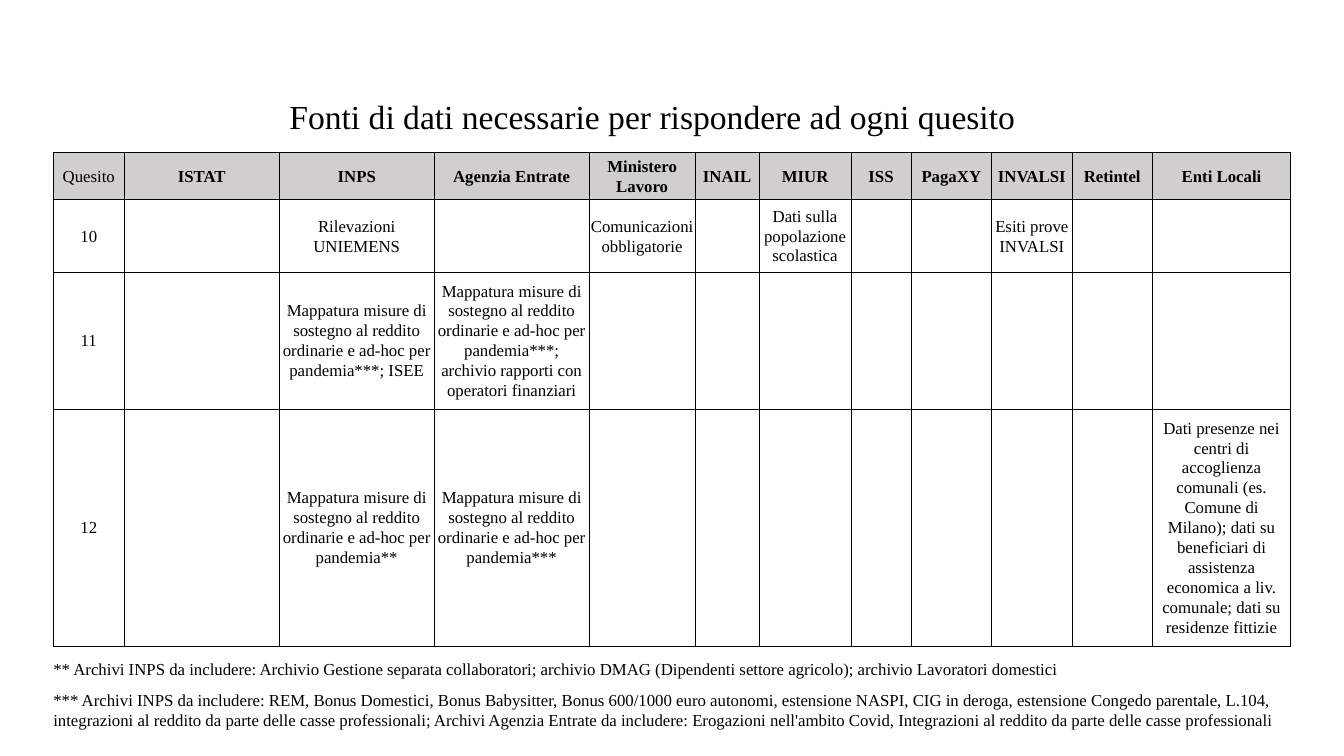
"""Build a slide listing the data sources needed for each question."""
from lxml import etree
from pptx import Presentation
from pptx.dml.color import RGBColor
from pptx.enum.text import MSO_ANCHOR, MSO_AUTO_SIZE, PP_ALIGN
from pptx.oxml.ns import qn
from pptx.util import Pt

CENTER, LEFT = PP_ALIGN.CENTER, PP_ALIGN.LEFT
TOP, MIDDLE = MSO_ANCHOR.TOP, MSO_ANCHOR.MIDDLE
FIXED = MSO_AUTO_SIZE.NONE

TITLE = "Fonti di dati necessarie per rispondere ad ogni quesito"
HEADS = ["Quesito", "ISTAT", "INPS", "Agenzia Entrate", "Ministero Lavoro", "INAIL",
         "MIUR", "ISS", "PagaXY", "INVALSI", "Retintel", "Enti Locali"]
AID = "Mappatura misure di sostegno al reddito ordinarie e ad-hoc per pandemia"
ROWS = [
    {"Quesito": "10", "INPS": "Rilevazioni UNIEMENS",
     "Ministero Lavoro": "Comunicazioni obbligatorie",
     "MIUR": "Dati sulla popolazione scolastica", "INVALSI": "Esiti prove INVALSI"},
    {"Quesito": "11", "INPS": AID + "***; ISEE",
     "Agenzia Entrate": AID + "***; archivio rapporti con operatori finanziari"},
    {"Quesito": "12", "INPS": AID + "**", "Agenzia Entrate": AID + "***",
     "Enti Locali": "Dati presenze nei centri di accoglienza comunali (es. Comune di "
                    "Milano); dati su beneficiari di assistenza economica a liv. "
                    "comunale; dati su residenze fittizie"},
]
NOTES = [
    "** Archivi INPS da includere: Archivio Gestione separata collaboratori; archivio "
    "DMAG (Dipendenti settore agricolo); archivio Lavoratori domestici",
    "*** Archivi INPS da includere: REM, Bonus Domestici, Bonus Babysitter, Bonus "
    "600/1000 euro autonomi, estensione NASPI, CIG in deroga, estensione Congedo "
    "parentale, L.104, integrazioni al reddito da parte delle casse professionali; "
    "Archivi Agenzia Entrate da includere: Erogazioni nell'ambito Covid, Integrazioni "
    "al reddito da parte delle casse professionali",
]
WIDTHS = [50.7, 110.7, 110.7, 110.7, 75.7, 45.7, 65.7, 42.9, 57.5, 57.5, 57.5, 98.6]
HEIGHTS = [33.8, 51.8, 97.9, 169.2]
BLACK, WHITE, GRAY = "000000", "FFFFFF", "D0CECE"
CELL = {"margin_left": Pt(0.72), "margin_right": Pt(0.72), "margin_top": 0,
        "margin_bottom": 0, "vertical_anchor": MIDDLE}
FRAME = {"word_wrap": True, "auto_size": FIXED, "vertical_anchor": TOP}


def tint(color):
    return RGBColor.from_string(color)


def apply(thing, form):
    for name, value in form.items():
        setattr(thing, name, value)


def write(para, text, size, bold=False, **form):
    apply(para, form)
    run = para.add_run()
    run.text = text
    apply(run.font, {"name": "Times New Roman", "size": Pt(size), "bold": bold})
    run.font.color.rgb = tint(BLACK)


def border(cell):
    props = cell._tc.get_or_add_tcPr()
    for spot, side in enumerate(("a:lnL", "a:lnR", "a:lnT", "a:lnB")):
        line = etree.Element(qn(side), w=str(Pt(0.5)))
        fill = etree.SubElement(line, qn("a:solidFill"))
        etree.SubElement(fill, qn("a:srgbClr"), val=BLACK)
        props.insert(spot, line)


def add_grid(slide):
    shape = slide.shapes.add_table(len(HEIGHTS), len(WIDTHS), Pt(38.1), Pt(108.7),
                                   Pt(sum(WIDTHS)), Pt(sum(HEIGHTS)))
    grid = shape.table
    apply(grid, {"first_row": False, "horz_banding": False})
    for col, width in zip(grid.columns, WIDTHS):
        col.width = Pt(width)
    for row, height in zip(grid.rows, HEIGHTS):
        row.height = Pt(height)
    lines = [HEADS] + [[row.get(head, "") for head in HEADS] for row in ROWS]
    for r, line in enumerate(lines):
        for c, text in enumerate(line):
            cell = grid.cell(r, c)
            apply(cell, CELL)
            cell.fill.solid()
            cell.fill.fore_color.rgb = tint(WHITE if r else GRAY)
            border(cell)
            if text:
                write(cell.text_frame.paragraphs[0], text, 12, r == 0 and c > 0,
                      alignment=CENTER, line_spacing=1.07, space_after=Pt(8))


def main():
    deck = Presentation()
    apply(deck, {"slide_width": Pt(960), "slide_height": Pt(540)})
    slide = deck.slides.add_slide(deck.slide_layouts[5])
    title = slide.shapes.title
    apply(title, {"left": Pt(27), "top": Pt(64.8), "width": Pt(878), "height": Pt(36)})
    apply(title.text_frame, FRAME)
    write(title.text_frame.paragraphs[0], TITLE, 24, alignment=CENTER)
    add_grid(slide)
    frame = slide.shapes.add_textbox(Pt(31), Pt(466.6), Pt(896.4), Pt(68)).text_frame
    apply(frame, FRAME)
    for i, note in enumerate(NOTES):
        para = frame.add_paragraph() if i else frame.paragraphs[0]
        write(para, note, 12, alignment=LEFT, space_after=Pt(8))
    deck.save("out.pptx")


if __name__ == "__main__":
    main()
